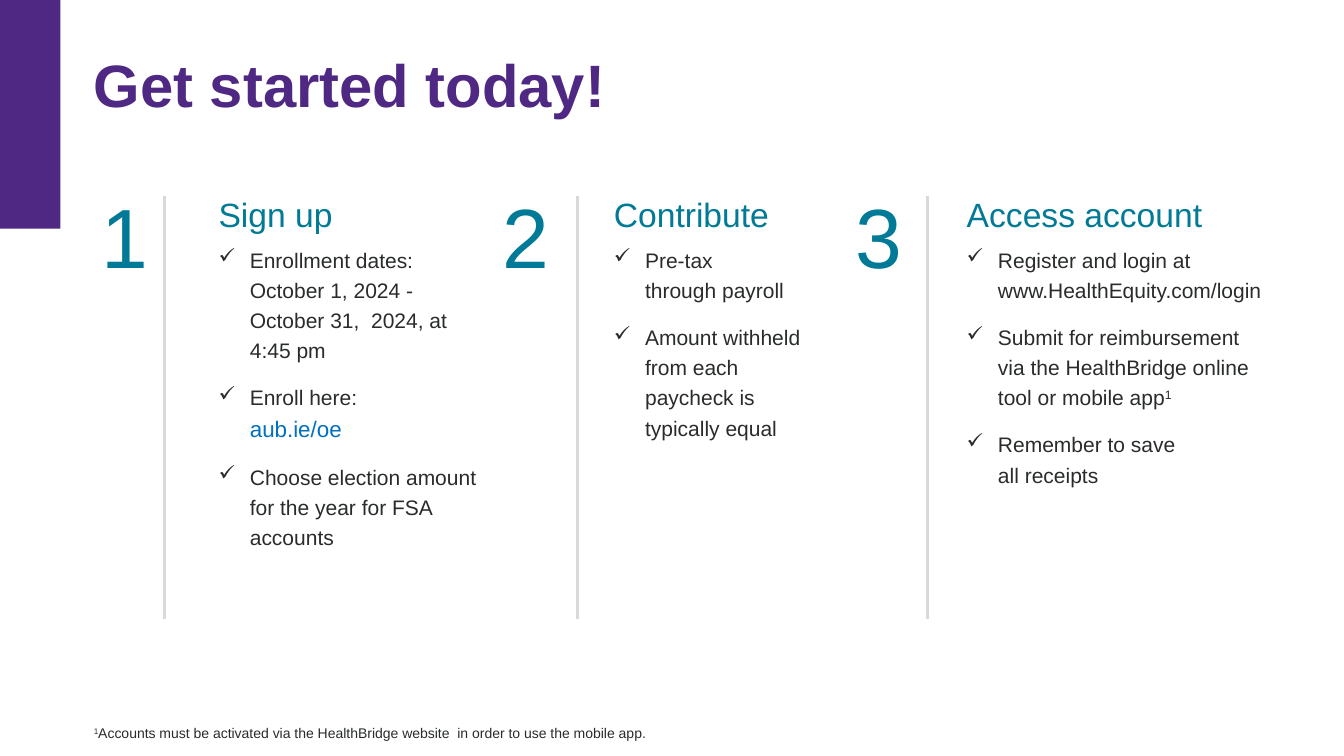
from lxml.etree import SubElement
from pptx import Presentation
from pptx.dml.color import RGBColor
from pptx.enum.shapes import MSO_CONNECTOR, MSO_SHAPE
from pptx.enum.text import PP_ALIGN
from pptx.oxml.ns import qn
from pptx.util import Inches, Pt

TITLE = "Get started today!"
FOOTNOTE = ("1", "Accounts must be activated via the HealthBridge\u00a0website\u00a0 "
            "in order to use the mobile app.")
LINK, NOTE_MARK = "link", "note mark"
STEPS = [
    ("Sign up\u00a0", [
        ("Enrollment dates: October 1, 2024 - \vOctober 31,  2024, at 4:45 pm",),
        ("Enroll here: \v", "aub.ie/oe", LINK),
        ("Choose election amount for the year for FSA accounts",),
    ]),
    ("Contribute", [
        ("Pre-tax \vthrough payroll",),
        ("Amount withheld from each paycheck is typically equal",),
    ]),
    ("Access account", [
        ("Register and login at www.HealthEquity.com/login",),
        ("Submit for reimbursement via\u00a0the HealthBridge online tool or mobile app",
         "1", NOTE_MARK),
        ("Remember to save \vall receipts",),
    ]),
]
# number left, number width, divider, text left, text width
COLUMNS = [(0.71, 1.05, 1.63, 2.07, 2.84),
           (4.73, 0.97, 5.73, 5.99, 2.26),
           (8.23, 0.97, 9.2, 9.49, 3.14)]
NUMBER_TOP, NUMBER_HEIGHT = 1.68, 0.37
TEXT_TOP, TEXT_HEIGHT = 1.83, 3.52
DIVIDER_TOP, DIVIDER_BOTTOM = 1.94, 6.14
MARGIN, HANG = 0.93, 0.31
PURPLE, TEAL, INK, BLUE, GREY = "4F2883", "007A96", "2A2C2C", "0070C0", "D9D9D9"


def color(code):
    return RGBColor.from_string(code)


def style(font, size, code, bold=False):
    font.name, font.size, font.bold = "Arial", Pt(size), bold
    font.color.rgb = color(code)


def add_frame(slide, left, top, width, height, inset=True):
    frame = slide.shapes.add_textbox(*map(Inches, (left, top, width, height))).text_frame
    frame.word_wrap = True
    if not inset:
        frame.margin_left = frame.margin_right = frame.margin_top = frame.margin_bottom = 0
    return frame


def write(paragraph, text, size, code, spacing, after=0, bold=False):
    paragraph.text = text
    paragraph.line_spacing, paragraph.space_after = spacing, Pt(after)
    style(paragraph.font, size, code, bold)


def raise_run(run):
    run.font._element.set("baseline", "30000")


def add_check(frame, text, extra="", role=None):
    item = frame.add_paragraph()
    properties = item._p.get_or_add_pPr()
    properties.set("marL", str(Inches(HANG)))
    properties.set("indent", str(-Inches(HANG)))
    SubElement(properties, qn("a:buChar")).set("char", "✓")
    write(item, text, 15, INK, 1.2, 12)
    if extra:
        run = item.add_run()
        run.text = extra
        if role == LINK:
            style(run.font, 16, BLUE)
        else:
            raise_run(run)


def add_step(slide, number, heading, checks, column):
    number_left, number_width, divider, text_left, text_width = column
    numeral = add_frame(slide, number_left, NUMBER_TOP, number_width, NUMBER_HEIGHT).paragraphs[0]
    write(numeral, str(number), 60, TEAL, 1.1)
    numeral.alignment = PP_ALIGN.CENTER
    frame = add_frame(slide, text_left, TEXT_TOP, text_width, TEXT_HEIGHT)
    write(frame.paragraphs[0], heading, 24, TEAL, 1.1, 6)
    for check in checks:
        add_check(frame, *check)
    rule = slide.shapes.add_connector(
        MSO_CONNECTOR.STRAIGHT,
        *map(Inches, (divider, DIVIDER_TOP, divider, DIVIDER_BOTTOM)))
    rule.line.color.rgb, rule.line.width = color(GREY), Pt(2)
    SubElement(rule._element.spPr, qn("a:effectLst"))


def main():
    """Build the three-step enrollment slide."""
    deck = Presentation()
    deck.slide_width, deck.slide_height = Inches(13.33), Inches(7.5)
    slide = deck.slides.add_slide(deck.slide_layouts[6])

    accent = slide.shapes.add_shape(MSO_SHAPE.RECTANGLE, 0, 0, Inches(0.6), Inches(2.27))
    accent.shadow.inherit = False
    accent.fill.solid()
    accent.fill.fore_color.rgb = color(PURPLE)
    accent.line.fill.background()

    title = add_frame(slide, MARGIN, 0.4, 11.85, 0.73, inset=False)
    write(title.paragraphs[0], TITLE, 42.7, PURPLE, 1.1, bold=True)

    for number, ((heading, checks), column) in enumerate(zip(STEPS, COLUMNS), 1):
        add_step(slide, number, heading, checks, column)

    footnote = add_frame(slide, MARGIN, 7.14, 11.75, 0.2, inset=False).paragraphs[0]
    mark, note = FOOTNOTE
    write(footnote, "", 10, INK, 1.3)
    marker = footnote.add_run()
    marker.text = mark
    raise_run(marker)
    footnote.add_run().text = note
    deck.save("out.pptx")


if __name__ == "__main__":
    main()
